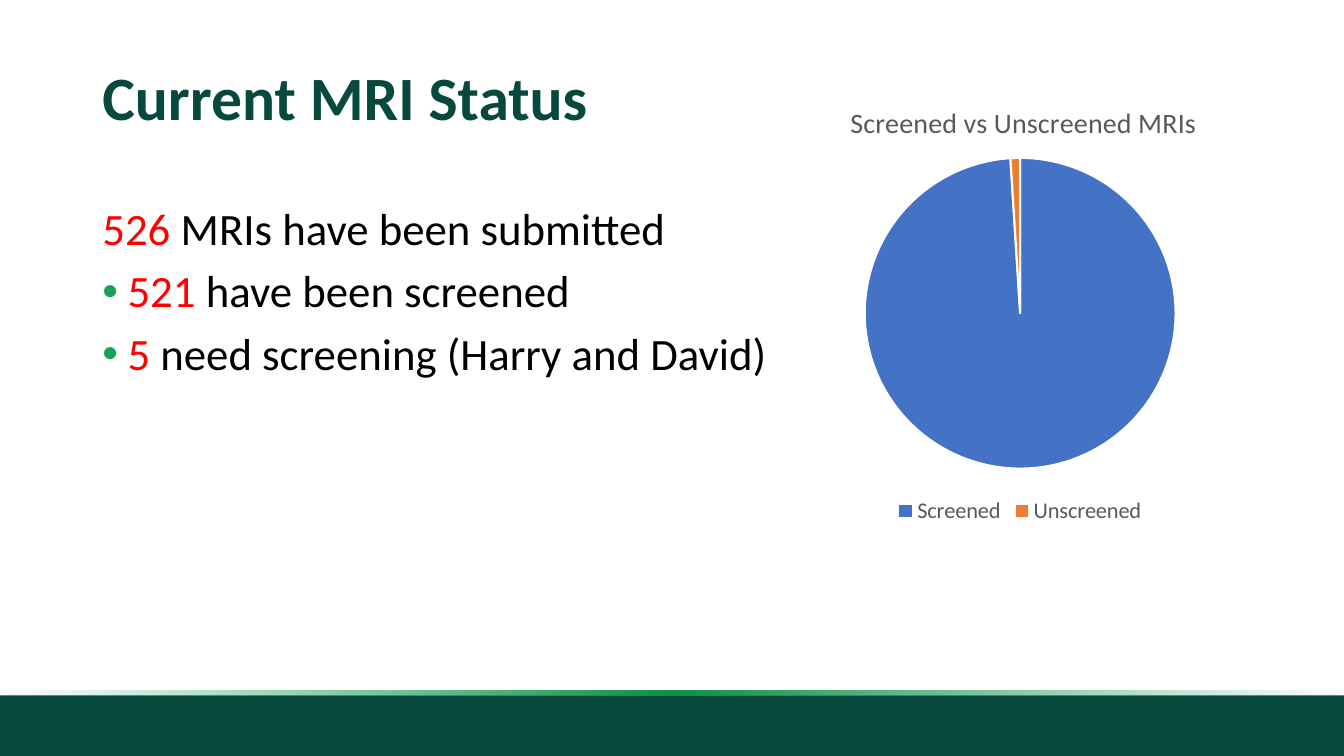
from lxml import etree
from pptx import Presentation
from pptx import util as u
from pptx.chart.data import CategoryChartData
from pptx.dml.color import RGBColor
from pptx.enum import chart as charts, shapes, text
from pptx.oxml import parse_xml
from pptx.oxml.ns import nsdecls, qn

COLUMNS, ROWS = 160, 90
FONT = "Calibri"
GREEN, BULLET, RED, BLACK, GREY, WHITE = (
    "07493C", "19A157", "FF0000", "000000", "595959", "FFFFFF")


def color(value):
    return RGBColor.from_string(value)


def style_font(font, fill, **values):
    for name, value in {"name": FONT, **values}.items():
        setattr(font, name, value)
    font.color.rgb = color(fill)


def add_bullet(paragraph):
    properties = paragraph._p.get_or_add_pPr()
    indent = u.Inches(0.25)
    properties.set("marL", str(indent))
    properties.set("indent", str(-indent))
    holder = etree.SubElement(properties, qn("a:buClr"))
    etree.SubElement(holder, qn("a:srgbClr"), val=BULLET)
    etree.SubElement(properties, qn("a:buFont"), typeface="Arial")
    etree.SubElement(properties, qn("a:buChar"), char="•")


def manual_layout(inner=False, **shares):
    """Layout element placing a chart part by shares of the chart's size."""
    target = '<c:layoutTarget val="inner"/>' if inner else ""
    modes = "".join(f'<c:{axis}Mode val="edge"/>' for axis in "xy")
    values = "".join(f'<c:{key} val="{share}"/>' for key, share in shares.items())
    return parse_xml(f'<c:layout {nsdecls("c")}><c:manualLayout>{target}{modes}{values}'
                     "</c:manualLayout></c:layout>")


def replace_layout(parent, layout, previous=None):
    for old in parent.findall(qn("c:layout")):
        parent.remove(old)
    if previous is None:
        parent.insert(0, layout)
    else:
        previous.addnext(layout)


class StatusSlide:
    def __init__(self, presentation):
        self.slide = presentation.slides.add_slide(presentation.slide_layouts[6])
        self.column = presentation.slide_width / COLUMNS
        self.row = presentation.slide_height / ROWS

    def place(self, left, top, width, height):
        return [round(cells * unit) for cells, unit in zip(
            (left, top, width, height), (self.column, self.row) * 2)]

    def band(self, *cells, fill=None):
        shape = self.slide.shapes.add_shape(
            shapes.MSO_SHAPE.RECTANGLE, *self.place(*cells))
        shape.shadow.inherit = False
        shape.line.fill.background()
        if fill:
            shape.fill.solid()
            shape.fill.fore_color.rgb = color(fill)
        return shape

    def fading_band(self, *cells, stops):
        """Band with a horizontal gradient of (percent, colour, opacity) stops."""
        shape = self.band(*cells)
        marks = "".join(
            f'<a:gs pos="{percent * 1000}"><a:srgbClr val="{fill}">'
            f'<a:alpha val="{opacity * 1000}"/></a:srgbClr></a:gs>'
            for percent, fill, opacity in stops)
        gradient = parse_xml(f'<a:gradFill {nsdecls("a")}><a:gsLst>{marks}</a:gsLst>'
                             '<a:lin ang="10800000" scaled="0"/></a:gradFill>')
        shape._element.spPr.find(qn("a:prstGeom")).addnext(gradient)

    def text(self, *cells, lines, size, anchor=text.MSO_ANCHOR.TOP, bold=False):
        """Text box of (bulleted, runs) lines, each run a (words, colour) pair."""
        frame = self.slide.shapes.add_textbox(*self.place(*cells)).text_frame
        frame.word_wrap = True
        frame.vertical_anchor = anchor
        for index, (bulleted, runs) in enumerate(lines):
            paragraph = frame.add_paragraph() if index else frame.paragraphs[0]
            paragraph.line_spacing = 0.9
            paragraph.space_before = u.Pt(10 if index else 0)
            if bulleted:
                add_bullet(paragraph)
            for words, fill in runs:
                run = paragraph.add_run()
                run.text = words
                style_font(run.font, fill, size=u.Pt(size), bold=bold)

    def pie(self, *cells, title, values, fills):
        data = CategoryChartData()
        data.categories = list(values)
        data.add_series("Series 1", list(values.values()))
        chart = self.slide.shapes.add_chart(
            charts.XL_CHART_TYPE.PIE, *self.place(*cells), data).chart
        style_font(chart.font, BLACK, size=u.Pt(10))
        chart.has_title = True
        frame = chart.chart_title.text_frame
        frame.text = title
        style_font(frame.paragraphs[0].runs[0].font, GREY, size=u.Pt(20), bold=False)
        heading = chart.chart_title._element
        replace_layout(heading, manual_layout(x=0.23, y=0.05), heading.find(qn("c:tx")))
        chart.has_legend = True
        chart.legend.position = charts.XL_LEGEND_POSITION.BOTTOM
        chart.legend.include_in_layout = False
        style_font(chart.legend.font, GREY, size=u.Pt(16))
        plot = chart.plots[0]
        plot.vary_by_categories = True
        replace_layout(plot._element.getparent(),
                       manual_layout(inner=True, x=0.26, y=0.18, w=0.48, h=0.69))
        for index, fill in enumerate(fills):
            slice_format = plot.series[0].points[index].format
            slice_format.fill.solid()
            slice_format.fill.fore_color.rgb = color(fill)
            slice_format.line.color.rgb = color(WHITE)
            slice_format.line.width = u.Pt(1.5)


def main():
    presentation = Presentation()
    presentation.slide_width = u.Inches(13.33)
    presentation.slide_height = u.Inches(7.5)
    status = StatusSlide(presentation)
    status.band(0, 82.8, COLUMNS, 7.2, fill=GREEN)
    status.fading_band(0, 82.2, COLUMNS, 0.6, stops=[
        (0, "0D9D4F", 0), (50, "0C9049", 100), (100, "0FAB56", 0)])
    status.text(11, 4.8, 138, 14.3, size=44, bold=True, anchor=text.MSO_ANCHOR.MIDDLE,
                lines=[(False, [("Current MRI Status", GREEN)])])
    counts = [("526", " MRIs have been submitted"),
              ("521", " have been screened"),
              ("5", " need screening (Harry and David)")]
    status.text(11, 24, 83.6, 57.1, size=32, lines=[
        (index > 0, [(count, RED), (words, BLACK)])
        for index, (count, words) in enumerate(counts)])
    status.pie(82.9, 8.9, 77.1, 54.1, title="Screened vs Unscreened MRIs",
               values={"Screened": 99, "Unscreened": 1}, fills=["4472C4", "ED7D31"])
    presentation.save("out.pptx")


if __name__ == "__main__":
    main()
